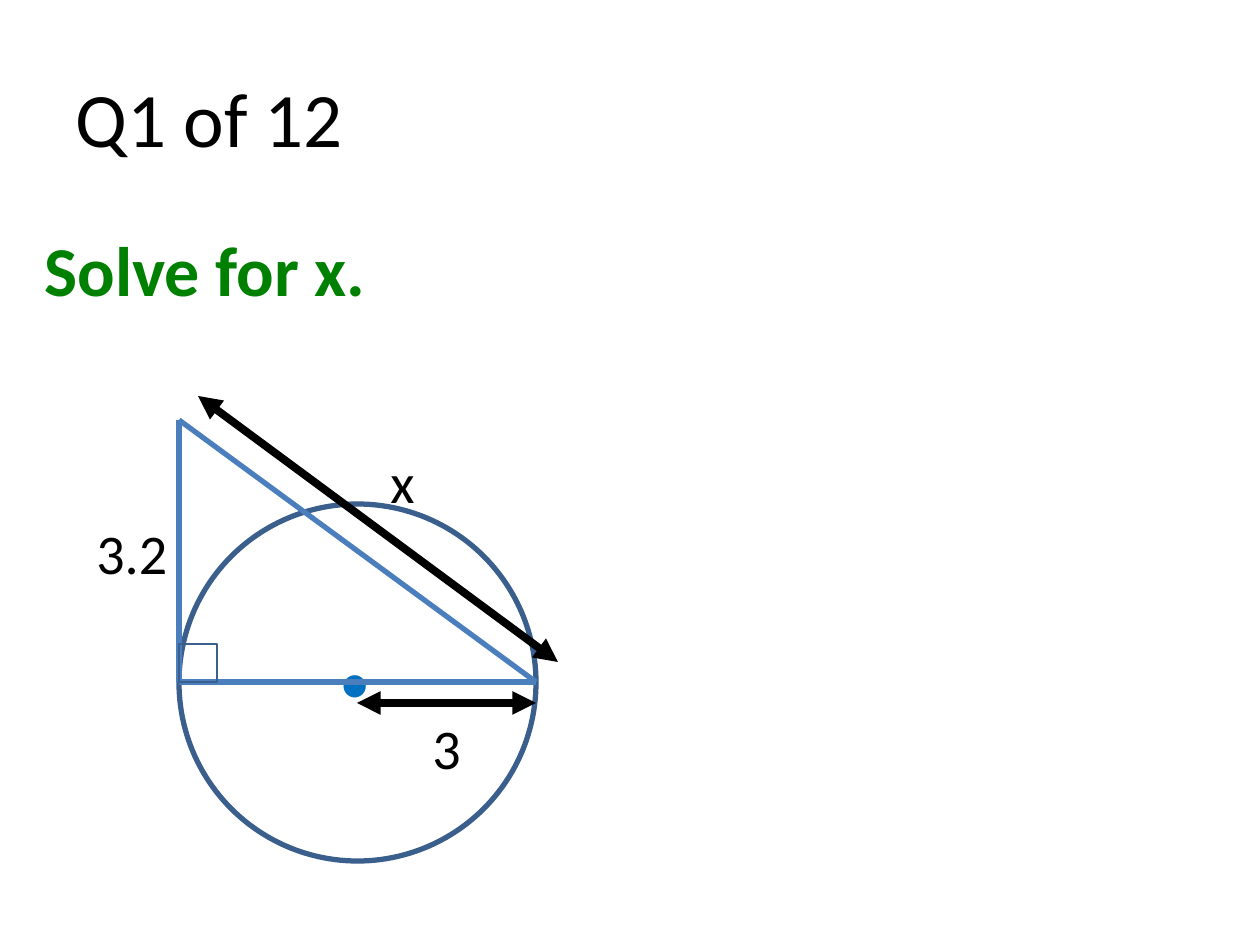
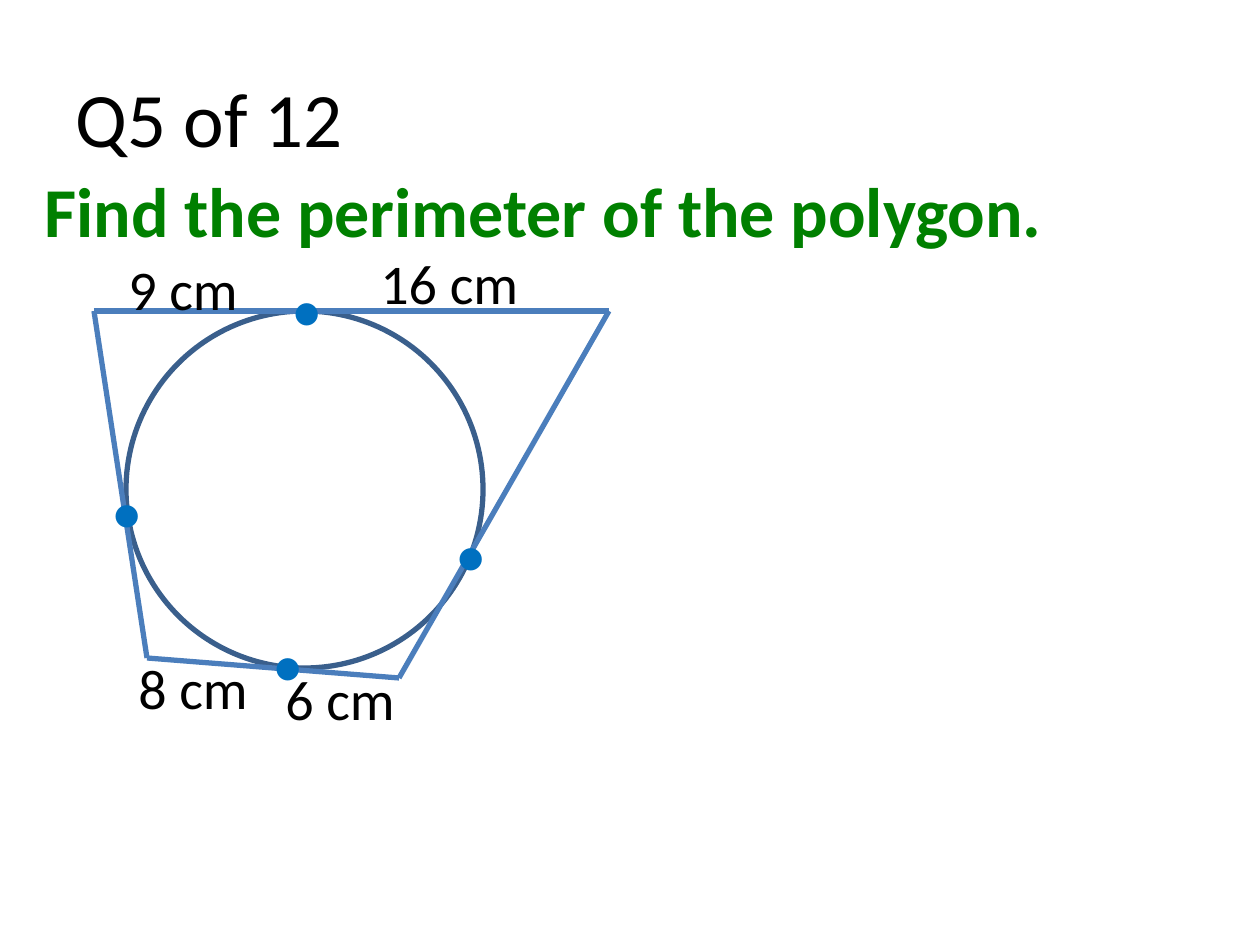
from itertools import pairwise

from lxml import etree
from pptx import Presentation
from pptx.dml.color import RGBColor
from pptx.enum.shapes import MSO_CONNECTOR, MSO_SHAPE
from pptx.enum.text import MSO_ANCHOR, MSO_AUTO_SIZE
from pptx.oxml.ns import qn
from pptx.util import Pt

STRAIGHT = MSO_CONNECTOR.STRAIGHT
ELLIPSE, RECTANGLE = MSO_SHAPE.OVAL, MSO_SHAPE.RECTANGLE
TOP, MIDDLE = MSO_ANCHOR.TOP, MSO_ANCHOR.MIDDLE
GROW = MSO_AUTO_SIZE.SHAPE_TO_FIT_TEXT

EMU_PER_PX = 914400 / 126
FONT = "Calibri"
BLACK, GREEN, DOT_BLUE = "000000", "008000", "0070C0"
OUTLINE_BLUE, EDGE_BLUE = "3A5F8C", "4B7EBC"
TITLE_BOX = (63, 38, 1134, 157)
DIAMETER = 357
RADIUS = DIAMETER // 2
LABEL_WIDTH, WIDE_LABEL_WIDTH, LABEL_HEIGHT = 136, 231, 81
DOT_WIDTH, DOT_HEIGHT = 54, 89


def px(*lengths):
    return [round(length * EMU_PER_PX) for length in lengths]


def color(hex_string):
    return RGBColor.from_string(hex_string)


def add_text(slide, box, text, size, text_color, bold=False, anchor=TOP, wrap=True):
    shape = slide.shapes.add_textbox(*px(*box))
    frame = shape.text_frame
    frame.word_wrap = wrap
    frame.vertical_anchor = anchor
    if anchor == TOP:
        frame.auto_size = GROW
    run = frame.paragraphs[0].add_run()
    run.text = text
    run.font.name, run.font.size, run.font.bold = FONT, Pt(size), bold
    run.font.color.rgb = color(text_color)


def add_outline(slide, preset, box, width):
    shape = slide.shapes.add_shape(preset, *px(*box))
    shape.shadow.inherit = False
    shape.fill.background()
    shape.line.color.rgb = color(OUTLINE_BLUE)
    shape.line.width = Pt(width)


def add_line(slide, origin, start, end, line_color=EDGE_BLUE, width=3, arrows=False):
    left, top = origin
    ends = px(left + start[0], top + start[1], left + end[0], top + end[1])
    connector = slide.shapes.add_connector(STRAIGHT, *ends)
    connector.line.color.rgb = color(line_color)
    connector.line.width = Pt(width)
    if arrows:
        line = connector.line._get_or_add_ln()
        for tag in ("a:headEnd", "a:tailEnd"):
            etree.SubElement(line, qn(tag), type="triangle")
    etree.SubElement(connector._element.spPr, qn("a:effectLst"))


def add_polygon(slide, origin, corners):
    for start, end in pairwise(corners + corners[:1]):
        add_line(slide, origin, start, end)


def add_circle(slide, origin):
    add_outline(slide, ELLIPSE, (*origin, DIAMETER, DIAMETER), 3)


def add_dot(slide, origin, x, y):
    box = (origin[0] + x, origin[1] + y, DOT_WIDTH, DOT_HEIGHT)
    add_text(slide, box, "•", 36, DOT_BLUE, wrap=False)


def add_label(slide, origin, text, x, y, width=LABEL_WIDTH):
    box = (origin[0] + x, origin[1] + y, width, LABEL_HEIGHT)
    add_text(slide, box, text, 32, BLACK)


def add_question(presentation, number, task, task_box):
    slide = presentation.slides.add_slide(presentation.slide_layouts[6])
    add_text(slide, TITLE_BOX, f"Q{number} of 12", 44, BLACK, anchor=MIDDLE)
    add_text(slide, task_box, task, 40, GREEN, bold=True, anchor=MIDDLE)
    return slide


def draw_tangent_triangle(slide, origin):
    """Right triangle on the diameter; offsets run from the circle's box."""
    apex, tangent_point, far_end = (0, -84), (0, RADIUS), (DIAMETER, RADIUS)
    add_circle(slide, origin)
    add_dot(slide, origin, 148, 131)
    add_polygon(slide, origin, [apex, tangent_point, far_end])

    # Right-angle mark
    side = 38
    mark = (origin[0], origin[1] + RADIUS - side, side, side)
    add_outline(slide, RECTANGLE, mark, 1.5)

    # Lengths and their arrows
    for text, x, y in (("3.2", -95, 8), ("x", 199, -63), ("3", 241, 203)):
        add_label(slide, origin, text, x, y)
    for start, end in (((19, -108), (379, 158)), ((RADIUS, 199), (DIAMETER, 199))):
        add_line(slide, origin, start, end, BLACK, 4.5, arrows=True)


def draw_tangent_polygon(slide, origin):
    """Quadrilateral around the circle; offsets run from the circle's box."""
    add_circle(slide, origin)
    add_polygon(slide, origin, [(-32, 0), (483, 0), (273, 367), (21, 347)])

    # Tangent points
    for x, y in ((-27, 154), (153, -48), (317, 197), (134, 307)):
        add_dot(slide, origin, x, y)

    # Tangent lengths
    for length, x, y in ((9, -10, -63), (6, 147, 347), (8, 0, 336)):
        add_label(slide, origin, f"{length} cm", x, y)
    add_label(slide, origin, "16 cm", 242, -69, WIDE_LABEL_WIDTH)


def main():
    presentation = Presentation()
    presentation.slide_width, presentation.slide_height = px(1260, 945)

    slide = add_question(presentation, 1, "Solve for x.", (32, 179, 1176, 179))
    draw_tangent_triangle(slide, (179, 504))

    slide = add_question(presentation, 5, "Find the perimeter of the polygon.",
                         (32, 147, 1176, 126))
    draw_tangent_polygon(slide, (126, 311))

    presentation.save("out.pptx")


if __name__ == "__main__":
    main()
